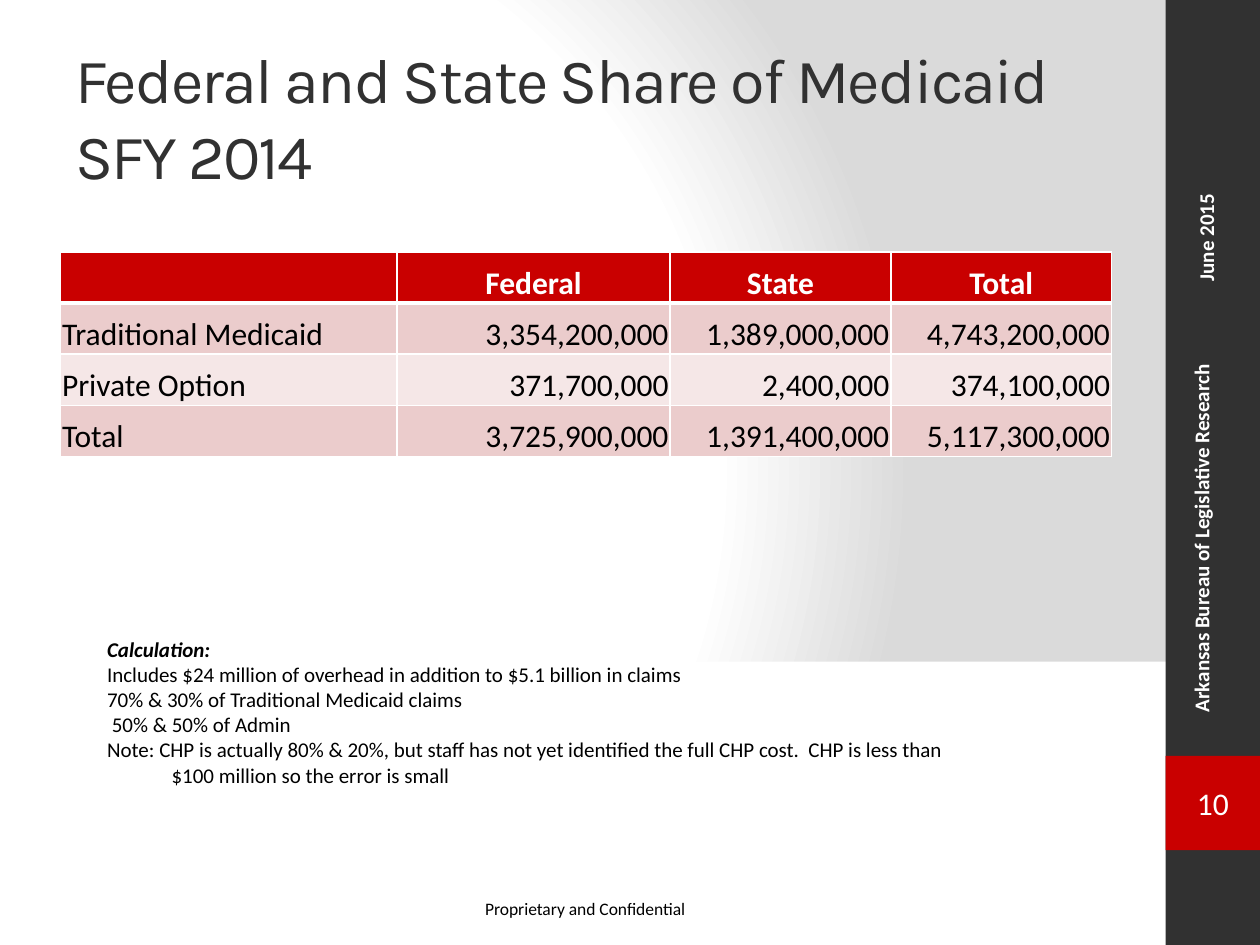
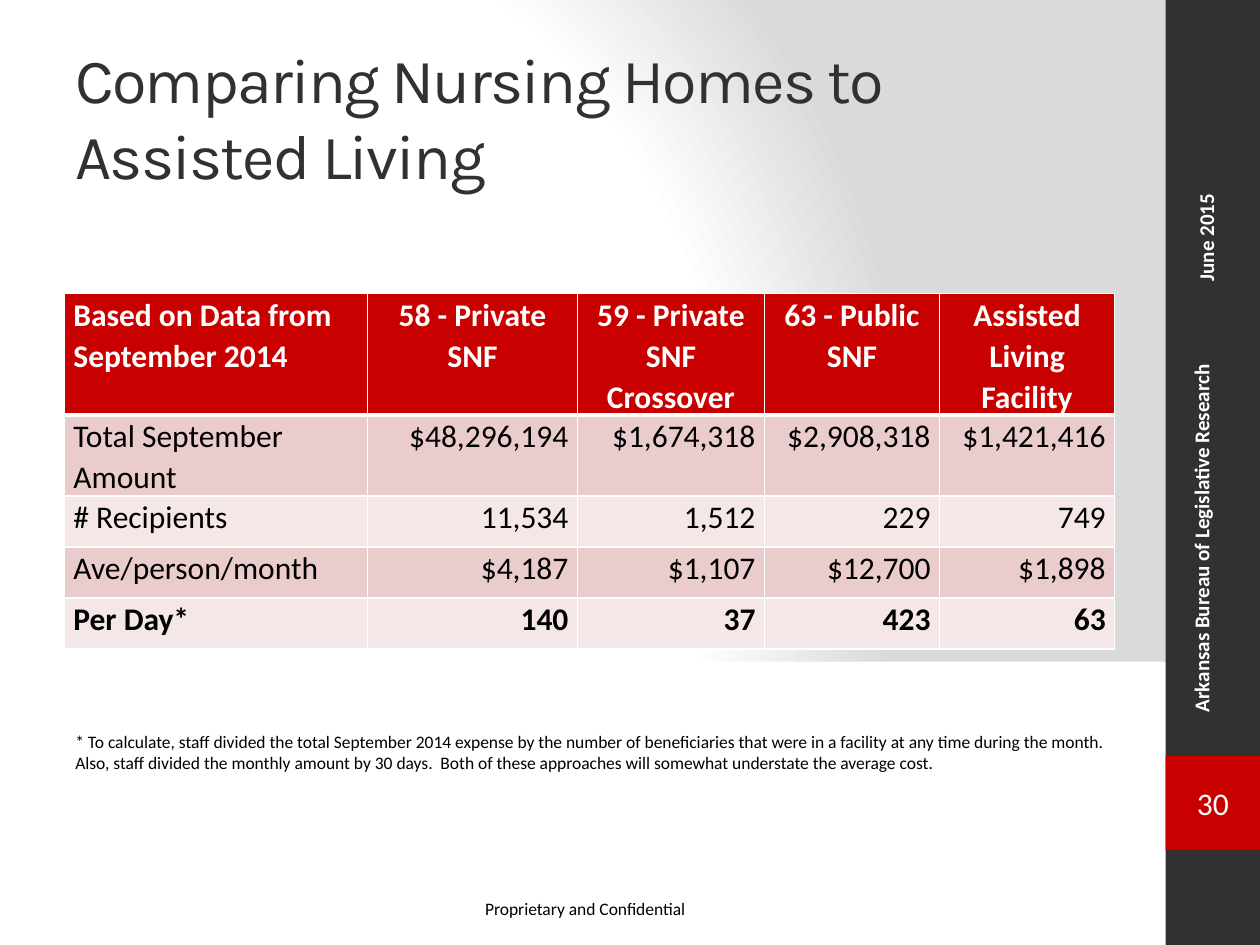
from lxml.etree import SubElement
from pptx import Presentation
from pptx.dml.color import RGBColor
from pptx.enum.shapes import MSO_SHAPE
from pptx.enum.text import MSO_ANCHOR, PP_ALIGN
from pptx.oxml import parse_xml
from pptx.oxml.ns import nsdecls, qn
from pptx.util import Cm, Pt

rgb = RGBColor.from_string
WHITE, BLACK, CHARCOAL, RED = "FFFFFF", "000000", "313131", "C90000"
BODY_BANDS = ["EBCCCC", "F5E7E7"]

BACKGROUND = f"""<p:bg {nsdecls("p", "a")}><p:bgPr>
<a:gradFill rotWithShape="1"><a:gsLst>
<a:gs pos="0"><a:srgbClr val="FFFFFF"/></a:gs>
<a:gs pos="75000"><a:srgbClr val="FFFFFF"/></a:gs>
<a:gs pos="100000"><a:srgbClr val="DADADA"/></a:gs></a:gsLst>
<a:path path="circle"><a:fillToRect l="20000" t="50000" r="100000" b="50000"/></a:path>
</a:gradFill><a:effectLst/></p:bgPr></p:bg>"""

TITLE = {"name": "Karla", "size": Pt(36)}
RAIL = {"name": "Calibri", "size": Pt(12), "bold": True}
FOOTER = {"name": "Calibri", "size": Pt(10)}
NOTE = {"name": "Calibri", "size": Pt(12)}
PAGE_NUMBER = {"name": "Calibri", "size": Pt(18)}

# Boxes are left, top, width, height in centimetres
BANDS = [
    ((0, 13.34, 23.7, 5.71), WHITE),
    ((23.5, 0, 1.9, 19.05), CHARCOAL),
    ((23.5, 15.24, 1.9, 1.9), RED),
]
RAIL_TEXTS = [
    ((23.83, 5.92, 1.02, 8.69), "Arkansas Bureau of Legislative Research"),
    ((23.93, 1.27, 1.02, 4.65), "June 2015"),
]

PAGES = [
    {
        "number": "10",
        "title": "Federal and State Share of Medicaid\vSFY 2014",
        "corner": (1.22, 5.08),
        "columns": [6.78, 5.51, 4.45, 4.45],
        "cell": {"margin_left": Cm(0.03), "margin_right": Cm(0.03), "margin_top": Cm(0.03),
                 "margin_bottom": 0, "vertical_anchor": MSO_ANCHOR.BOTTOM},
        "line_spacing": 1.0,
        "bold_rows": [0],
        "rows": [
            ["", "Federal", "State", "Total"],
            ["Traditional Medicaid", "3,354,200,000", "1,389,000,000", "4,743,200,000"],
            ["Private Option", "371,700,000", "2,400,000", "374,100,000"],
            ["Total", "3,725,900,000", "1,391,400,000", "5,117,300,000"],
        ],
        "note_box": (1.91, 12.7, 17.98, 3.33),
        "note_style": NOTE,
        "hanging": Cm(1.3),
        "note": [
            "Calculation:",
            "Includes $24 million of overhead in addition to $5.1 billion in claims",
            "70% & 30% of Traditional Medicaid claims",
            " 50% & 50% of Admin",
            "Note: CHP is actually 80% & 20%, but staff has not yet identified the full CHP cost.  "
            "CHP is less than $100 million so the error is small",
        ],
    },
    {
        "number": "30",
        "title": "Comparing Nursing Homes to Assisted Living",
        "corner": (1.3, 5.92),
        "columns": [6.11, 4.23, 3.77, 3.53, 3.53],
        "cell": {"margin_left": Cm(0.18), "margin_right": Cm(0.18), "margin_top": 0,
                 "margin_bottom": 0, "vertical_anchor": MSO_ANCHOR.TOP},
        "line_spacing": 1.07,
        "bold_rows": [0, 4],
        "rows": [
            ["Based on Data from September 2014", "58 - Private SNF",
             "59 - Private SNF Crossover", "63 - Public SNF", "Assisted Living Facility"],
            ["Total September Amount", "$48,296,194", "$1,674,318", "$2,908,318", "$1,421,416"],
            ["# Recipients", "11,534", "1,512", "229", "749"],
            ["Ave/person/month", "$4,187", "$1,107", "$12,700", "$1,898"],
            ["Per Day*", "140", "37", "423", "63"],
        ],
        "note_box": (1.27, 14.61, 21.79, 1.12),
        "note_style": FOOTER,
        "hanging": 0,
        "note": [
            "* To calculate, staff divided the total September 2014 expense by the number of "
            "beneficiaries that were in a facility at any time during the month.  Also, staff "
            "divided the monthly amount by 30 days.  Both of these approaches will somewhat "
            "understate the average cost.",
        ],
    },
]


def write(frame, lines, style, color, align=PP_ALIGN.LEFT):
    """Fill a text frame with one paragraph per line, all in one style."""
    frame.word_wrap = True
    frame.text = "\n".join(lines)
    for paragraph in frame.paragraphs:
        paragraph.alignment = align
        for key, value in style.items():
            setattr(paragraph.font, key, value)
        paragraph.font.color.rgb = rgb(color)
        for run in paragraph.runs:
            for key, value in style.items():
                setattr(run.font, key, value)
            run.font.color.rgb = rgb(color)


def add_text(slide, box, lines, style, color):
    frame = slide.shapes.add_textbox(*map(Cm, box)).text_frame
    write(frame, lines, style, color)
    return frame


prs = Presentation()
prs.slide_width, prs.slide_height = Cm(25.4), Cm(19.05)

for page in PAGES:
    slide = prs.slides.add_slide(prs.slide_layouts[6])
    slide.element.cSld.insert(0, parse_xml(BACKGROUND))

    for box, color in BANDS:
        band = slide.shapes.add_shape(MSO_SHAPE.RECTANGLE, *map(Cm, box))
        band.shadow.inherit = False
        band.fill.solid()
        band.fill.fore_color.rgb = rgb(color)
        band.line.fill.background()
    # The last band is the red square that carries the page number
    write(band.text_frame, [page["number"]], PAGE_NUMBER, WHITE, PP_ALIGN.CENTER)
    band.text_frame.vertical_anchor = MSO_ANCHOR.MIDDLE

    footer = add_text(slide, (9.53, 17.98, 4.6, 0.69), ["Proprietary and Confidential"],
                      FOOTER, BLACK)
    footer.word_wrap = False
    for box, text in RAIL_TEXTS:
        rail = add_text(slide, box, [text], RAIL, WHITE)
        rail._txBody.bodyPr.set("vert", "vert270")

    title = add_text(slide, (1.27, 0.76, 21.16, 3.18), [page["title"]], TITLE, CHARCOAL)
    title.vertical_anchor = MSO_ANCHOR.MIDDLE
    for run in title.paragraphs[0].runs:
        run.font._element.set("spc", "-100")

    rows, columns = page["rows"], page["columns"]
    table = slide.shapes.add_table(
        len(rows), len(columns), *map(Cm, page["corner"]),
        Cm(sum(columns)), Cm(1.03 * len(rows))).table
    for column, width in zip(table.columns, columns):
        column.width = Cm(width)
    for r, row in enumerate(rows):
        table.rows[r].height = Cm(1.03)
        for c, text in enumerate(row):
            cell = table.cell(r, c)
            for key, value in page["cell"].items():
                setattr(cell, key, value)
            if c == 0:
                align = PP_ALIGN.LEFT
            else:
                align = PP_ALIGN.CENTER if r == 0 else PP_ALIGN.RIGHT
            style = {"name": "Calibri", "size": Pt(18), "bold": r in page["bold_rows"]}
            write(cell.text_frame, [text], style, WHITE if r == 0 else BLACK, align)
            cell.text_frame.paragraphs[0].line_spacing = page["line_spacing"]

            # Inner edges are drawn once, by the cell to the left or above
            edges = {"lnL": c == 0, "lnR": True, "lnT": r == 0, "lnB": True}
            for edge in [name for name, drawn in edges.items() if drawn]:
                points = 3 if r == 0 and edge == "lnB" else 1
                line = SubElement(cell._tc.get_or_add_tcPr(), qn(f"a:{edge}"), w=str(Pt(points)))
                SubElement(SubElement(line, qn("a:solidFill")), qn("a:srgbClr"), val=WHITE)
            cell.fill.solid()
            cell.fill.fore_color.rgb = rgb(RED if r == 0 else BODY_BANDS[(r - 1) % 2])

    note = add_text(slide, page["note_box"], page["note"], page["note_style"], BLACK)
    if page["hanging"]:
        for paragraph in note.paragraphs:
            properties = paragraph._p.get_or_add_pPr()
            properties.set("marL", str(page["hanging"]))
            properties.set("indent", str(-page["hanging"]))
        heading = note.paragraphs[0].runs[0].font
        heading.bold = heading.italic = True

prs.save("out.pptx")
